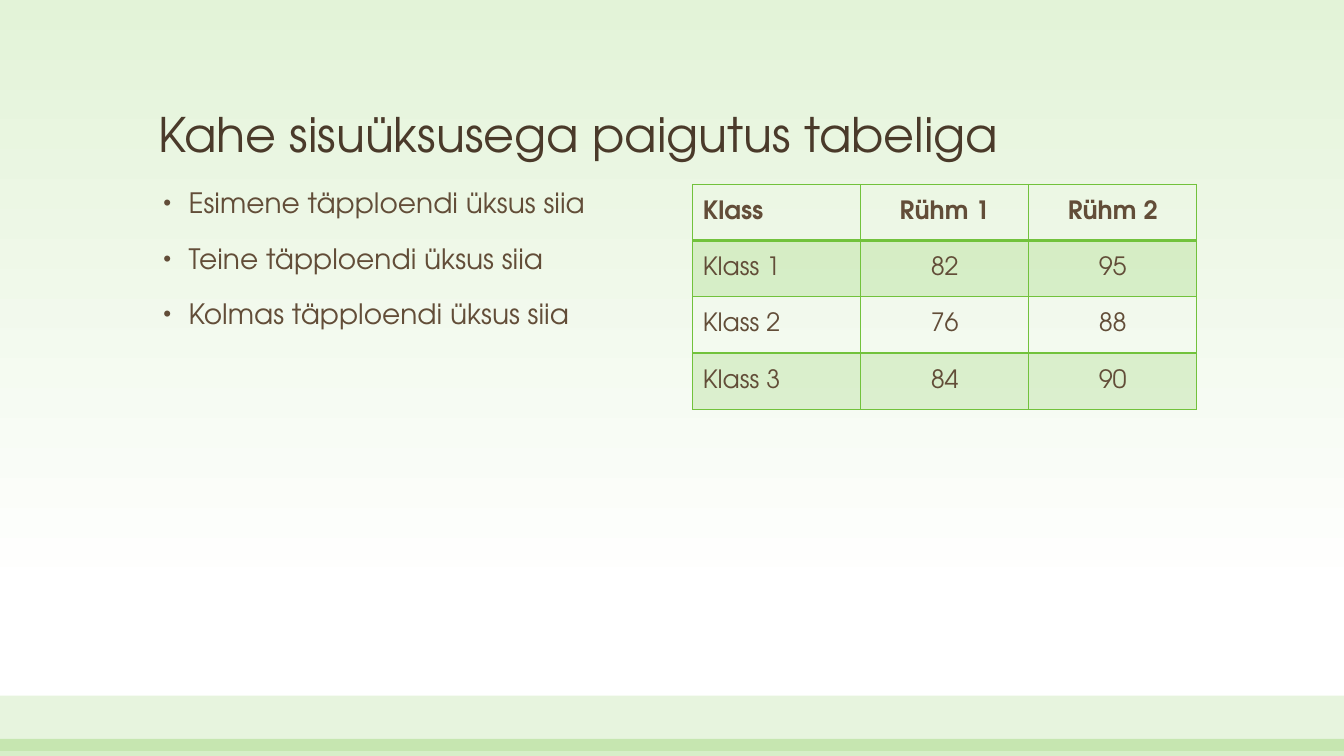
"""Build a green slide with a bulleted list beside a table of class results."""
from dataclasses import dataclass

from lxml import etree
from pptx import Presentation, util as u
from pptx.dml import color, fill as fills
from pptx.enum import shapes, text
from pptx.oxml import ns
from pptx.slide import Slide
from pptx.table import _Cell
from pptx.text import text as txt


@dataclass(frozen=True)
class Theme:
    font: str = "TeX Gyre Adventor"
    title: str = "4A3A2A"
    body: str = "624D38"
    green: str = "72C23C"
    sky: str = "E3F3D8"
    white: str = "FFFFFF"
    title_size: int = 34
    list_size: int = 20
    table_size: int = 18
    row_alpha: int = 20


@dataclass(frozen=True)
class Band:
    top: float
    height: float
    alpha: int


THEME = Theme()
WIDTH, HEIGHT = 13.33, 7.5
CONTENT_TOP = 1.83
BANDS = [Band(6.9, 0.55, 17), Band(7.33, 0.17, 28)]
TITLE = "Kahe sisuüksusega paigutus tabeliga"
BULLETS = [
    "Esimene täpploendi üksus siia",
    "Teine täpploendi üksus siia",
    "Kolmas täpploendi üksus siia",
]
RESULTS = [
    ["Klass", "Rühm 1", "Rühm 2"],
    ["Klass 1", "82", "95"],
    ["Klass 2", "76", "88"],
    ["Klass 3", "84", "90"],
]


def add_node(parent: etree._Element, tag: str, **attributes: str) -> etree._Element:
    node = etree.SubElement(parent, ns.qn(tag))
    for name, value in attributes.items():
        node.set(name, value)
    return node


def fill_tint(fill: fills.FillFormat, owner: etree._Element, alpha: int) -> None:
    fill.solid()
    fill.fore_color.rgb = color.RGBColor.from_string(THEME.green)
    tint = owner.find(f"{ns.qn('a:solidFill')}/{ns.qn('a:srgbClr')}")
    add_node(tint, "a:alpha", val=str(alpha * 1000))


def add_span(para: txt._Paragraph, words: str, size: int, ink: str, bold: bool = False) -> None:
    span = para.add_run()
    span.text = words
    span.font.name = THEME.font
    span.font.size = u.Pt(size)
    span.font.bold = bold
    span.font.color.rgb = color.RGBColor.from_string(ink)


def paint_background(page: Slide) -> None:
    fill = page.background.fill
    fill.gradient()
    fill.gradient_angle = 270
    stops = [(0, THEME.sky), (0.79, THEME.white)]
    for stop, (position, shade) in zip(fill.gradient_stops, stops):
        stop.position = position
        stop.color.rgb = color.RGBColor.from_string(shade)


def add_band(page: Slide, band: Band) -> None:
    box = page.shapes.add_shape(
        shapes.MSO_SHAPE.RECTANGLE, 0, u.Inches(band.top), u.Inches(WIDTH), u.Inches(band.height)
    )
    box.shadow.inherit = False
    box.line.fill.background()
    fill_tint(box.fill, box._element.spPr, band.alpha)


def add_title(page: Slide) -> None:
    box = page.shapes.title
    box.left, box.top = u.Inches(1.47), u.Inches(0.48)
    box.width, box.height = u.Inches(10.4), u.Inches(1.19)
    frame = box.text_frame
    frame.auto_size = text.MSO_AUTO_SIZE.NONE
    frame.vertical_anchor = text.MSO_ANCHOR.BOTTOM
    para = frame.paragraphs[0]
    para.alignment = text.PP_ALIGN.LEFT
    para.line_spacing = 0.9
    add_span(para, TITLE, THEME.title_size, THEME.title)


def add_bullets(page: Slide) -> None:
    box = page.placeholders[1]
    box.left, box.top = u.Inches(1.47), u.Inches(CONTENT_TOP)
    box.width, box.height = u.Inches(5), u.Inches(4.75)
    frame = box.text_frame
    frame.auto_size = text.MSO_AUTO_SIZE.NONE
    for index, words in enumerate(BULLETS):
        para = frame.add_paragraph() if index else frame.paragraphs[0]
        para.line_spacing = 0.9
        para.space_before = u.Pt(18)
        properties = para._p.get_or_add_pPr()
        properties.set("marL", str(u.Inches(0.3)))
        properties.set("indent", str(u.Inches(-0.25)))
        add_node(properties, "a:buSzPct", val="80000")
        add_node(properties, "a:buFont", typeface="Arial")
        add_node(properties, "a:buChar", char="•")
        add_span(para, words, THEME.list_size, THEME.body)


def add_borders(cell: _Cell, row: int) -> None:
    properties = cell._tc.get_or_add_tcPr()
    widths = {"L": 1, "R": 1, "T": 2 if row == 1 else 1, "B": 2 if row == 0 else 1}
    for index, (side, width) in enumerate(widths.items()):
        line = add_node(properties, f"a:ln{side}", w=str(u.Pt(width)))
        add_node(add_node(line, "a:solidFill"), "a:srgbClr", val=THEME.green)
        properties.insert(index, line)


def add_results(page: Slide) -> None:
    rows, columns = len(RESULTS), len(RESULTS[0])
    table = page.shapes.add_table(
        rows, columns, u.Inches(6.87), u.Inches(CONTENT_TOP), u.Inches(5), u.Inches(2.23)
    ).table
    table.first_row = table.horz_banding = False
    for row, values in enumerate(RESULTS):
        for column, value in enumerate(values):
            cell = table.cell(row, column)
            cell.vertical_anchor = text.MSO_ANCHOR.MIDDLE
            if row % 2:
                fill_tint(cell.fill, cell._tc.get_or_add_tcPr(), THEME.row_alpha)
            else:
                cell.fill.background()
            add_borders(cell, row)
            para = cell.text_frame.paragraphs[0]
            para.alignment = text.PP_ALIGN.CENTER if column else text.PP_ALIGN.LEFT
            add_span(para, value, THEME.table_size, THEME.body, bold=row == 0)


def main() -> None:
    deck = Presentation()
    deck.slide_width, deck.slide_height = u.Inches(WIDTH), u.Inches(HEIGHT)
    page = deck.slides.add_slide(deck.slide_layouts[1])
    paint_background(page)
    for band in BANDS:
        add_band(page, band)
    add_title(page)
    add_results(page)
    add_bullets(page)
    deck.save("out.pptx")


if __name__ == "__main__":
    main()
